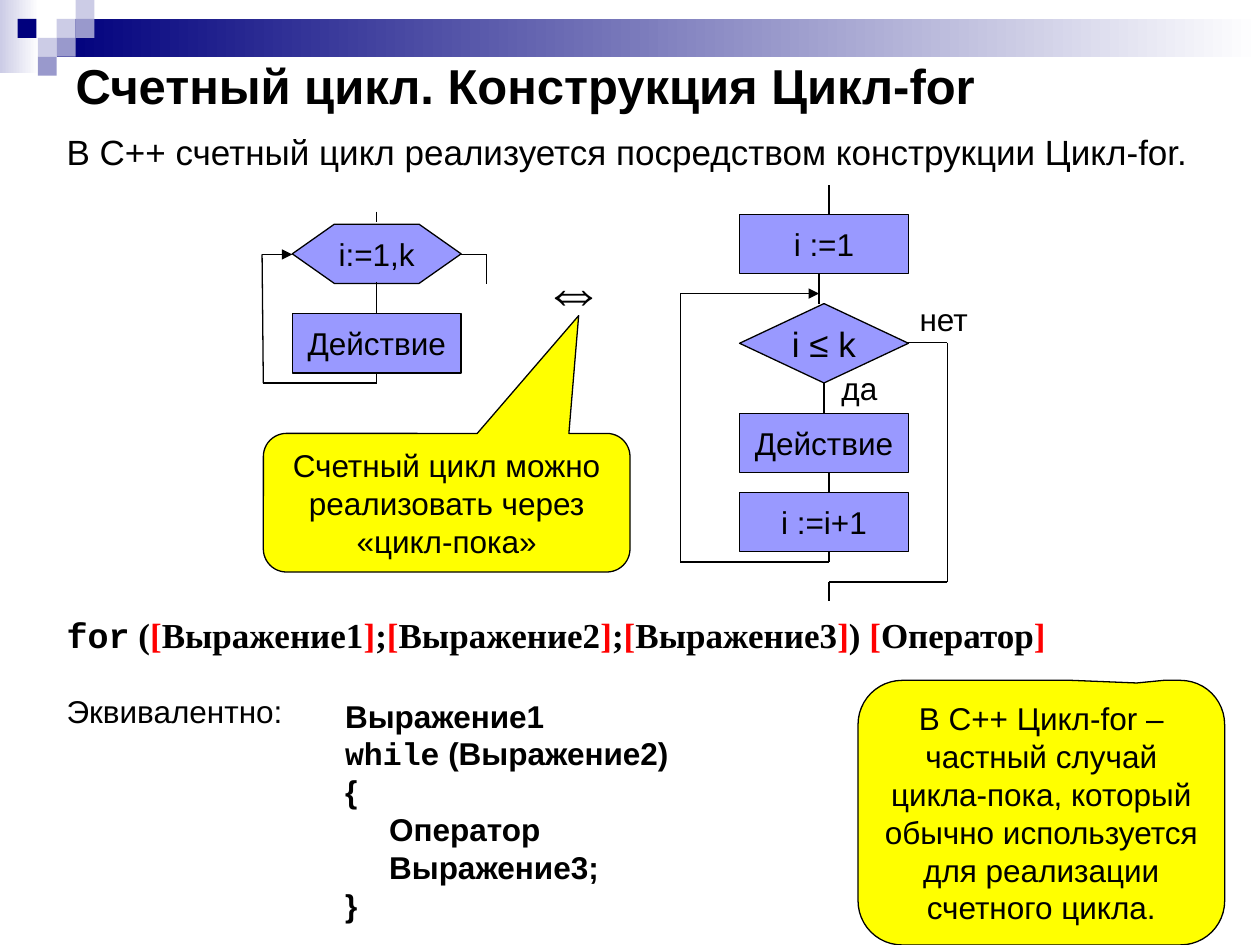
from itertools import pairwise

from lxml import etree
from pptx import Presentation
from pptx.dml.color import RGBColor
from pptx.enum.shapes import MSO_CONNECTOR, MSO_SHAPE
from pptx.enum.text import MSO_ANCHOR, PP_ALIGN
from pptx.oxml.ns import qn
from pptx.util import Inches, Pt

RECT = MSO_SHAPE.RECTANGLE
HEX = MSO_SHAPE.HEXAGON
DIAMOND = MSO_SHAPE.DIAMOND
BUBBLE = MSO_SHAPE.ROUNDED_RECTANGULAR_CALLOUT
STRAIGHT = MSO_CONNECTOR.STRAIGHT
TOP, MIDDLE = MSO_ANCHOR.TOP, MSO_ANCHOR.MIDDLE
LEFT, CENTER = PP_ALIGN.LEFT, PP_ALIGN.CENTER

BLACK = RGBColor(0x00, 0x00, 0x00)
WHITE = RGBColor(0xFF, 0xFF, 0xFF)
RED = RGBColor(0xFF, 0x00, 0x00)
YELLOW = RGBColor(0xFF, 0xFF, 0x00)
NAVY = RGBColor(0x00, 0x00, 0x7D)
BLUE = RGBColor(0x99, 0x99, 0xFF)
MIST = RGBColor(0xCC, 0xCC, 0xE6)
HAZE = RGBColor(0x99, 0x99, 0xCC)

COLS, ROWS = 100, 75
CELL = Inches(0.1)
TILE = 1.5
STEP_W, STEP_H = 13.4, 4.7


def grid(*cells):
    """Turn counts of grid cells into lengths."""
    return [round(cell * CELL) for cell in cells]


def write(frame, lines, size=18, font="Arial", bold=False, align=LEFT,
          anchor=TOP, wrap=True, indents=()):
    """Fill a frame with lines, each a string or a list of (text, font, colour)."""
    frame.word_wrap, frame.vertical_anchor = wrap, anchor
    for row, line in enumerate(lines):
        para = frame.add_paragraph() if row else frame.paragraphs[0]
        para.alignment = align
        if row in indents:
            para._p.get_or_add_pPr().set("marL", str(Inches(0.35)))
        parts = [(line, font, BLACK)] if isinstance(line, str) else line
        for text, face, colour in parts:
            run = para.add_run()
            run.text = text
            run.font.size, run.font.bold = Pt(size), bold
            run.font.name, run.font.color.rgb = face, colour


def label(slide, x, y, w, h, *lines, **style):
    """Add a text box."""
    box = slide.shapes.add_textbox(*grid(x, y, w, h))
    write(box.text_frame, lines, **style)


def block(slide, kind, x, y, w, h, fill, fade=None, edge=None):
    """Add a preset shape with a plain or fading fill."""
    shape = slide.shapes.add_shape(kind, *grid(x, y, w, h))
    shape.shadow.inherit = False
    if fade is None:
        shape.fill.solid()
        shape.fill.fore_color.rgb = fill
    else:
        shape.fill.gradient()
        shape.fill.gradient_angle = 0
        for stop, colour in zip(shape.fill.gradient_stops, (fill, fade)):
            stop.color.rgb = colour
    if edge is None:
        shape.line.fill.background()
    else:
        shape.line.color.rgb, shape.line.width = edge, Pt(0.75)
    return shape


def step(slide, x, y, text, kind=RECT, h=STEP_H, size=18):
    """Add a flowchart step."""
    shape = block(slide, kind, x, y, STEP_W, h, BLUE, edge=BLACK)
    write(shape.text_frame, [text], size=size, align=CENTER,
          anchor=MIDDLE, wrap=False)
    return shape


def callout(slide, x, y, h, tip, text):
    """Add a yellow callout that points to its tip."""
    shape = block(slide, BUBBLE, x, y, 29.1, h, YELLOW, edge=BLACK)
    shape.adjustments[0], shape.adjustments[1] = tip
    write(shape.text_frame, [text], align=CENTER)


def trace(slide, *points, arrow=False):
    """Join points with lines, the last one with an optional arrowhead."""
    for start, end in pairwise(points):
        line = slide.shapes.add_connector(STRAIGHT, *grid(*start, *end))
        line.line.color.rgb, line.line.width = BLACK, Pt(0.75)
        props = line._element.spPr
        if arrow and end == points[-1]:
            head = etree.SubElement(props.find(qn("a:ln")), qn("a:tailEnd"))
            head.set("type", "triangle")
        etree.SubElement(props, qn("a:effectLst"))


def header(slide):
    """Draw the fading band and the tiles at its left end."""
    block(slide, RECT, 0, 0, 3.1, 5.8, MIST, fade=WHITE)
    block(slide, RECT, 4.5, TILE, COLS - 4.5, 2 * TILE, NAVY, fade=WHITE)
    tiles = ((3, 1, MIST), (4, 0, MIST), (4, 1, HAZE), (2, 2, MIST),
             (0.93, 1, NAVY), (3, 2, HAZE), (2, 3, HAZE))
    for col, row, fill in tiles:
        block(slide, RECT, col * TILE, row * TILE, TILE, TILE, fill)


def count_loop(slide):
    """Draw the counting loop."""
    left, axis = 23.2, 29.9
    step(slide, left, 17.8, "i:=1,k", kind=HEX).adjustments[0] = 0.71
    step(slide, left, 24.9, "Действие")
    trace(slide, (axis, 16.8), (axis, 17.6))
    trace(slide, (axis, 22.4), (axis, 24.9))
    trace(slide, (axis, 29.6), (axis, 30.4), (20.9, 30.4), (20.8, 20.2),
          (left, 20.2), arrow=True)
    trace(slide, (36.6, 20.2), (38.6, 20.2), (38.6, 22.5))


def while_loop(slide):
    """Draw the same loop with a condition."""
    left, axis, side = 58.7, 65.8, 75.2
    for y, text in ((17, "i :=1"), (32.8, "Действие"), (39.1, "i :=i+1")):
        step(slide, left, y, text)
    step(slide, left, 24.1, "i ≤ k", kind=DIAMOND, h=6.3, size=20)
    label(slide, 65.8, 28.8, 4.9, 4, "да", wrap=False)
    label(slide, 72, 23.3, 5.9, 4, "нет", wrap=False)
    trace(slide, (axis, 14.7), (axis, 17))
    trace(slide, (65, 21.7), (65, 24.1))
    trace(slide, (65.4, 30.4), (65.4, 32.8))
    trace(slide, (axis, 37.5), (axis, 39.1))
    trace(slide, (axis, 43.8), (axis, 44.6), (54, 44.6), (54, 23.3),
          (65, 23.3), arrow=True)
    trace(slide, (72.1, 27.2), (side, 27.2), (side, 46.2),
          (axis, 46.2), (axis, 47.7))


def syntax():
    """List the parts of the for statement, optional brackets in red."""
    serif = "Times New Roman"
    parts = [("for", "Courier New", BLACK), (" (", serif, BLACK)]
    terms = (("Выражение1", ";"), ("Выражение2", ";"),
             ("Выражение3", ") "), ("Оператор", ""))
    for term, mark in terms:
        parts += [("[", serif, RED), (term, serif, BLACK), ("]", serif, RED)]
        if mark:
            parts.append((mark, serif, BLACK))
    return parts


def main():
    """Build the slide."""
    deck = Presentation()
    deck.slide_width, deck.slide_height = grid(COLS, ROWS)
    slide = deck.slides.add_slide(deck.slide_layouts[5])
    header(slide)
    title = slide.shapes.title
    title.left, title.top, title.width, title.height = grid(5, 5, 90, 3.4)
    write(title.text_frame, ["Счетный цикл. Конструкция Цикл-for"],
          size=28, bold=True, anchor=MIDDLE)
    label(slide, 4.3, 9.9, 95.7, 4.3, "В С++ счетный цикл реализуется "
          "посредством конструкции Цикл-for.", size=20)
    count_loop(slide)
    label(slide, 42.1, 19.4, 10.9, 7, "⇔", size=36)
    while_loop(slide)
    callout(slide, 20.9, 34.4, 11, (0.36, -1.35),
            "Счетный цикл можно реализовать через «цикл-пока»")
    label(slide, 4.3, 48.2, 95.7, 4.3, syntax(), size=20, bold=True)
    label(slide, 4.3, 54.4, 20, 4, "Эквивалентно:")
    loop = [("while", "Courier New", BLACK), (" (Выражение2)", "Arial", BLACK)]
    label(slide, 26.4, 54.8, 29.9, 19.5, "Выражение1", loop, "{", "Оператор",
          "Выражение3;", "}", bold=True, indents=(3, 4))
    callout(slide, 68.1, 54, 21, (0.26, -0.49),
            "В С++ Цикл-for – частный случай цикла-пока, который обычно "
            "используется для реализации счетного цикла.")
    deck.save("out.pptx")


if __name__ == "__main__":
    main()
